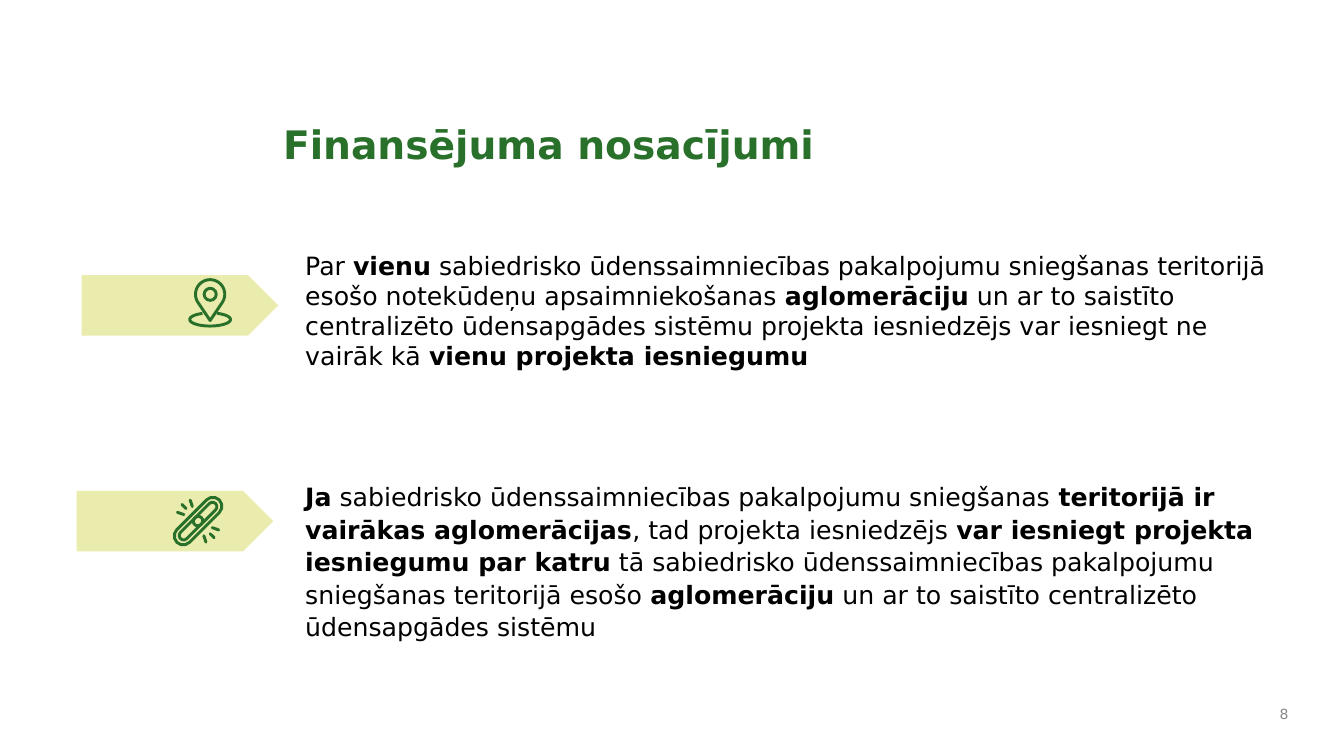
from math import cos, radians, sin

from lxml import etree
from pptx import Presentation
from pptx.dml.color import RGBColor
from pptx.enum.shapes import MSO_CONNECTOR, MSO_SHAPE
from pptx.enum.text import MSO_ANCHOR, MSO_AUTO_SIZE, PP_ALIGN
from pptx.oxml.ns import qn
from pptx.util import Inches, Pt

ARROW = MSO_SHAPE.PENTAGON
OVAL = MSO_SHAPE.OVAL
CAPSULE = MSO_SHAPE.ROUNDED_RECTANGLE
STRAIGHT = MSO_CONNECTOR.STRAIGHT
TOP, MIDDLE = MSO_ANCHOR.TOP, MSO_ANCHOR.MIDDLE
LEFT, RIGHT = PP_ALIGN.LEFT, PP_ALIGN.RIGHT
FIT_TEXT = MSO_AUTO_SIZE.SHAPE_TO_FIT_TEXT

COLORS = {"green": "29702A", "lime": "EAECAD", "text": "000000", "number": "898989"}
FONT = "DejaVu Sans"
COLUMNS, ROWS = 133.33, 75  # square grid cells, a tenth of an inch each


def grid(cells):
    return Inches(cells / 10)


def color(name):
    return RGBColor.from_string(COLORS[name])


class SlidePainter:
    def __init__(self, page, stroke=2.1):
        self.page = page
        self.stroke = Pt(stroke)

    def text(self, place, runs, size, tint, anchor=TOP, align=LEFT,
             spacing=None, after=0, fit=False):
        """Runs are (wording, bold) pairs of one paragraph."""
        box = self.page.shapes.add_textbox(*map(grid, place))
        frame = box.text_frame
        frame.word_wrap = True
        frame.vertical_anchor = anchor
        if fit:
            frame.auto_size = FIT_TEXT
        para = frame.paragraphs[0]
        para.alignment = align
        para.space_after = Pt(after)
        if spacing:
            para.line_spacing = spacing
        for wording, bold in runs:
            span = para.add_run()
            span.text = wording
            span.font.name = FONT
            span.font.size = Pt(size)
            span.font.bold = bold
            span.font.color.rgb = color(tint)

    def arrow(self, left, top, width, height):
        shape = self.page.shapes.add_shape(ARROW, *map(grid, (left, top, width, height)))
        shape.shadow.inherit = False
        shape.fill.solid()
        shape.fill.fore_color.rgb = color("lime")
        shape.line.fill.background()

    def outline(self, shape):
        shape.shadow.inherit = False
        shape.fill.background()
        self.pen(shape.line)

    def pen(self, line):
        line.color.rgb = color("green")
        line.width = self.stroke

    def ring(self, kind, x, y, width, height, turn=0):
        """Outlined preset shape centred on x, y."""
        place = (x - width / 2, y - height / 2, width, height)
        shape = self.page.shapes.add_shape(kind, *map(grid, place))
        if kind == CAPSULE:
            shape.adjustments[0] = 0.5
        shape.rotation = turn
        self.outline(shape)

    def curve(self, points, close):
        steps = [(grid(x), grid(y)) for x, y in points]
        builder = self.page.shapes.build_freeform(*steps[0])
        builder.add_line_segments(steps[1:], close=close)
        self.outline(builder.convert_to_shape())

    def ray(self, start, end):
        line = self.page.shapes.add_connector(STRAIGHT, *map(grid, start + end))
        self.pen(line.line)
        line.line._get_or_add_ln().set("cap", "rnd")
        etree.SubElement(line._element.spPr, qn("a:effectLst"))

    def pin_icon(self, x, y):
        """Map pin whose head is centred on x, y."""
        self.curve(arc(x, y, 1.45, 1.45, 147, 393) + [(x, y + 2.6)], True)
        self.ring(OVAL, x, y, 1.2, 1.2)
        self.curve(arc(x, y + 2.5, 2.02, 0.65, -70, 250), False)

    def chain_icon(self, x, y):
        """Two chain links with rays, centred on x, y."""
        self.ring(CAPSULE, x, y, 5.95, 1.78, -45)
        rays = (((1.2, 1.25), (1.6, 1.65)),
                ((1.4, 0.65), (2.05, 0.87)),
                ((0.57, 1.45), (0.78, 2.08)))
        for side in (1, -1):
            self.ring(CAPSULE, x + 0.7 * side, y - 0.7 * side, 2.95, 0.88, -45)
            for ends in rays:
                self.ray(*((x + side * dx, y + side * dy) for dx, dy in ends))


def arc(x, y, across, down, first, last, step=6):
    angles = [radians(angle) for angle in range(first, last + 1, step)]
    return [(x + across * cos(angle), y + down * sin(angle)) for angle in angles]


def main():
    deck = Presentation()
    deck.slide_width, deck.slide_height = grid(COLUMNS), grid(ROWS)
    painter = SlidePainter(deck.slides.add_slide(deck.slide_layouts[6]))

    # Title and page number
    painter.text((27.1, 8.6, 88.9, 11.3), [("Finansējuma nosacījumi", True)],
                 28, "green", anchor=MIDDLE)
    painter.text((124.4, 69.2, 4.4, 3.3), [("8", False)],
                 10, "number", anchor=MIDDLE, align=RIGHT)

    # Arrows with their icons
    painter.arrow(8.1, 27.3, 19.5, 6)
    painter.arrow(7.6, 48.7, 19.5, 6)
    painter.pin_icon(20.85, 29.2)
    painter.chain_icon(19.65, 51.7)

    # Conditions
    one_application = [
        ("Par ", False),
        ("vienu", True),
        (" sabiedrisko ūdenssaimniecības pakalpojumu sniegšanas teritorijā "
         "esošo notekūdeņu apsaimniekošanas ", False),
        ("aglomerāciju", True),
        (" un ar to saistīto centralizēto ūdensapgādes sistēmu projekta "
         "iesniedzējs var iesniegt ne vairāk kā ", False),
        ("vienu projekta iesniegumu", True),
    ]
    several_areas = [
        ("Ja", True),
        (" sabiedrisko ūdenssaimniecības pakalpojumu sniegšanas ", False),
        ("teritorijā ir vairākas aglomerācijas", True),
        (", tad projekta iesniedzējs ", False),
        ("var iesniegt projekta iesniegumu par katru", True),
        (" tā sabiedrisko ūdenssaimniecības pakalpojumu sniegšanas "
         "teritorijā esošo ", False),
        ("aglomerāciju", True),
        (" un ar to saistīto centralizēto ūdensapgādes sistēmu", False),
    ]
    for top, height, runs, spacing in ((24.3, 13.2, one_application, None),
                                       (47.1, 17, several_areas, 1.07)):
        painter.text((29.3, top, 97.4, height), runs, 18, "text",
                     spacing=spacing, after=6, fit=True)

    deck.save("out.pptx")


if __name__ == "__main__":
    main()
